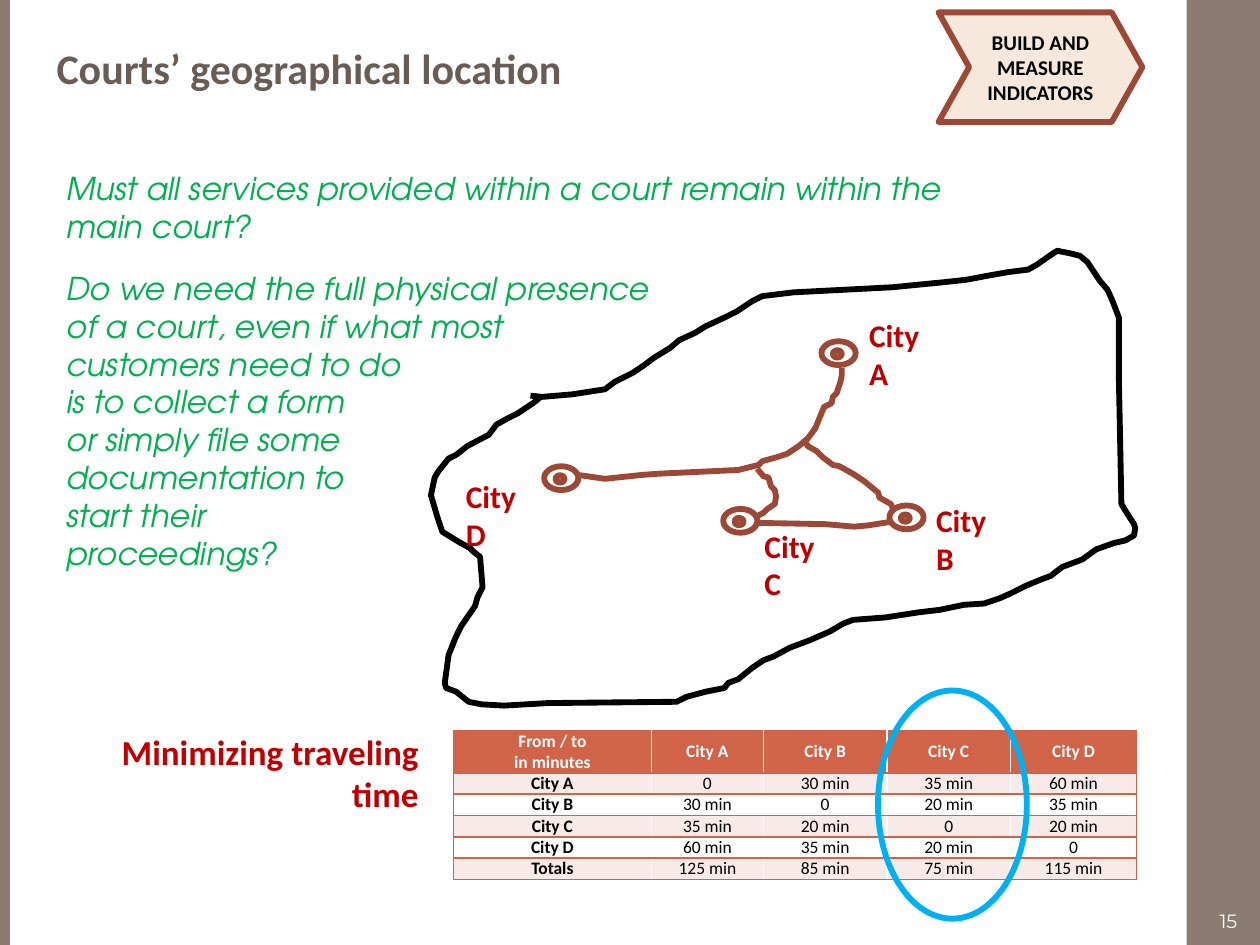
"""Build the slide on courts' geographical location, with its city map and travel times."""
from lxml import etree
from pptx import Presentation
from pptx import util as u
from pptx.dml.color import RGBColor
from pptx.enum import shapes, text
from pptx.oxml.ns import qn


def color(value):
    return RGBColor.from_string(value)


def write(paragraph, words, size, tint, bold=False, font="Calibri", align=text.PP_ALIGN.LEFT):
    paragraph.alignment = align
    run = paragraph.add_run()
    run.text = words
    run.font.name = font
    run.font.size = u.Pt(size)
    run.font.bold = bold
    run.font.color.rgb = color(tint)
    return run


CENTER = text.PP_ALIGN.CENTER
TAUPE, BROWN, CORAL, RED = "8C7B70", "9B4936", "D16349", "C00000"
STROKE = u.Pt(3.35)
MAP_UNIT = u.Cm(0.0254)

presentation = Presentation()
presentation.slide_width, presentation.slide_height = u.Cm(25.4), u.Cm(19.05)
slide = presentation.slides.add_slide(presentation.slide_layouts[6])

for left, width in ((23.92, 1.48), (0, 0.2)):
    band = slide.shapes.add_shape(
        shapes.MSO_SHAPE.RECTANGLE, u.Cm(left), 0, u.Cm(width), presentation.slide_height)
    band.shadow.inherit = False
    band.fill.solid()
    band.fill.fore_color.rgb = color(TAUPE)
    band.line.fill.background()

border = [
    (421, 314), (430, 315), (454, 313), (480, 309), (488, 303), (502, 296), (511, 290),
    (519, 284), (532, 276), (539, 270), (552, 264), (560, 259), (575, 252), (585, 247),
    (597, 239), (605, 235), (630, 232), (708, 228), (749, 224), (767, 222), (783, 219),
    (800, 216), (816, 214), (823, 210), (833, 203), (839, 199), (849, 201), (857, 203),
    (863, 208), (869, 217), (873, 223), (879, 230), (883, 239), (888, 252), (888, 300),
    (890, 400), (893, 405), (900, 416), (901, 419), (900, 425), (893, 429), (884, 431),
    (870, 436), (859, 444), (843, 450), (834, 457), (826, 460), (814, 465), (802, 471),
    (793, 475), (781, 479), (765, 480), (746, 484), (729, 486), (703, 490), (677, 492),
    (669, 495), (659, 501), (643, 508), (627, 514), (614, 521), (606, 524), (597, 530),
    (586, 539), (578, 542), (575, 546), (560, 549), (545, 553), (537, 557), (435, 558),
    (400, 560), (382, 559), (372, 557), (362, 549), (354, 546), (353, 542), (356, 520),
    (362, 505), (366, 497), (377, 481), (379, 474), (383, 466), (381, 442), (376, 438),
    (373, 435), (364, 430), (351, 422), (347, 410), (342, 393), (345, 379), (348, 374),
    (356, 364), (362, 361), (371, 354), (388, 345), (394, 337), (403, 332), (411, 328),
    (423, 320), (428, 316)]
road_d_to_a = [
    (459, 377), (480, 380), (509, 377), (522, 376), (586, 373), (602, 369), (605, 366),
    (616, 363), (625, 360), (634, 354), (641, 348), (647, 340), (654, 323), (660, 320),
    (661, 315), (664, 312), (667, 303), (668, 298), (668, 292)]
road_to_b = [
    (638, 348), (641, 354), (648, 358), (653, 363), (661, 369), (666, 370), (677, 376),
    (686, 382), (697, 391), (698, 395), (707, 400), (710, 406)]
road_to_c = [
    (601, 372), (606, 378), (610, 379), (612, 386), (615, 389), (616, 394), (615, 400),
    (609, 404), (606, 407), (600, 410)]
road_b_to_c = [(708, 414), (689, 417), (678, 417.5), (655, 416), (600, 415)]

for points, tint in ((border, "000000"), (road_d_to_a, BROWN), (road_to_b, BROWN),
                     (road_to_c, BROWN), (road_b_to_c, BROWN)):
    builder = slide.shapes.build_freeform(*points[0], scale=MAP_UNIT)
    builder.add_line_segments(points[1:], close=False)
    path = builder.convert_to_shape()
    path.shadow.inherit = False
    path.fill.background()
    path.line.color.rgb = color(tint)
    path.line.width = STROKE

cities = [
    ("City A", 16.56, 6.88, 17.27, 6.25),
    ("City B", 17.93, 10.19, 18.62, 9.98),
    ("City C", 14.58, 10.26, 15.16, 10.49),
    ("City D", 10.97, 9.4, 9.14, 9.5)]
for name, left, top, label_left, label_top in cities:
    for inset_x, inset_y, width, height in ((0.23, 0.18, 0.18, 0.15), (0, 0, 0.69, 0.48)):
        marker = slide.shapes.add_shape(
            shapes.MSO_SHAPE.OVAL, u.Cm(left + inset_x), u.Cm(top + inset_y),
            u.Cm(width), u.Cm(height))
        marker.shadow.inherit = False
        if inset_x:
            marker.fill.solid()
            marker.fill.fore_color.rgb = color(CORAL)
        else:
            marker.fill.background()
        marker.line.color.rgb = color(BROWN)
        marker.line.width = STROKE
    label = slide.shapes.add_textbox(u.Cm(label_left), u.Cm(label_top), u.Cm(1.77), u.Cm(0.84))
    label.text_frame.word_wrap = True
    write(label.text_frame.paragraphs[0], name, 18, RED, True)

title = slide.shapes.add_textbox(u.Cm(0.89), u.Cm(0.74), u.Cm(10.8), u.Cm(1.27))
write(title.text_frame.paragraphs[0], "Courts’ geographical location", 24, "695C54", True)

rows = [
    ["From / to\nin minutes", "City A", "City B", "City C", "City D"],
    ["City A", "0", "30 min", "35 min", "60 min"],
    ["City B", "30 min", "0", "20 min", "35 min"],
    ["City C", "35 min", "20 min", "0", "20 min"],
    ["City D", "60 min", "35 min", "20 min", "0"],
    ["Totals", "125 min", "85 min", "75 min", "115 min"]]
column_widths = [3.99, 2.26, 2.49, 2.49, 2.54]
table = slide.shapes.add_table(
    len(rows), len(column_widths), u.Cm(9.14), u.Cm(14.73), u.Cm(13.77), u.Cm(2.98)).table
for column, width in zip(table.columns, column_widths):
    column.width = u.Cm(width)
for row_index, values in enumerate(rows):
    table.rows[row_index].height = u.Cm(0.43 if row_index else 0.85)
    for column_index, value in enumerate(values):
        cell = table.cell(row_index, column_index)
        cell.margin_left = cell.margin_right = u.Cm(0.18)
        cell.margin_top = cell.margin_bottom = 0
        cell.vertical_anchor = text.MSO_ANCHOR.MIDDLE
        sides = ["a:lnT", "a:lnB"]
        if column_index == 0:
            sides.insert(0, "a:lnL")
        elif column_index == len(values) - 1:
            sides.insert(0, "a:lnR")
        properties = cell._tc.get_or_add_tcPr()
        for side in sides:
            edge = etree.SubElement(properties, qn(side), w=str(u.Pt(1)))
            edge_fill = etree.SubElement(edge, qn("a:solidFill"))
            etree.SubElement(edge_fill, qn("a:srgbClr"), val=CORAL)
        cell.fill.solid()
        cell.fill.fore_color.rgb = color(
            CORAL if row_index == 0 else "F7EAE9" if row_index % 2 else "FFFFFF")
        for line_index, line in enumerate(value.split("\n")):
            frame = cell.text_frame
            paragraph = frame.add_paragraph() if line_index else frame.paragraphs[0]
            write(paragraph, line, 10, "000000" if row_index else "FFFFFF",
                  row_index == 0 or column_index == 0, align=CENTER)

number = slide.shapes.add_textbox(u.Cm(24.23), u.Cm(18.14), u.Cm(1.07), u.Cm(0.86))
number.text_frame.word_wrap = True
number.text_frame.vertical_anchor = text.MSO_ANCHOR.MIDDLE
write(number.text_frame.paragraphs[0], "15", 11, "FFFFFF", font="Montserrat", align=CENTER)

questions = [
    "Must all services provided within a court remain within the main court?",
    "Do we need the full physical presence", "of a court, even if what most",
    "customers need to do", "is to collect a form", "or simply file some",
    "documentation to", "start their", "proceedings?"]
body = slide.shapes.add_textbox(u.Cm(1.09), u.Cm(3.28), u.Cm(19.6), u.Cm(9.5))
body.text_frame.word_wrap = True
for index, line in enumerate(questions):
    paragraph = body.text_frame.add_paragraph() if index else body.text_frame.paragraphs[0]
    paragraph.space_after = u.Pt(0 if index else 14)
    write(paragraph, line, 18, "00B050", font="TeX Gyre Adventor").font.italic = True

chevron = slide.shapes.add_shape(
    shapes.MSO_SHAPE.CHEVRON, u.Cm(18.92), u.Cm(0.25), u.Cm(4.11), u.Cm(2.21))
chevron.adjustments[0] = 0.28
chevron.shadow.inherit = False
chevron.fill.solid()
chevron.fill.fore_color.rgb = color("F6E9DB")
chevron.line.color.rgb = color(BROWN)
chevron.line.width = STROKE
chevron.text_frame.word_wrap = True
chevron.text_frame.vertical_anchor = text.MSO_ANCHOR.MIDDLE
write(chevron.text_frame.paragraphs[0], "BUILD AND MEASURE INDICATORS", 12, "000000", True,
      align=CENTER)

highlight = slide.shapes.add_shape(
    shapes.MSO_SHAPE.OVAL, u.Cm(17.7), u.Cm(13.92), u.Cm(3), u.Cm(4.6))
highlight.shadow.inherit = False
highlight.fill.background()
highlight.line.color.rgb = color("00B0F0")
highlight.line.width = STROKE

goal = slide.shapes.add_textbox(u.Cm(0.94), u.Cm(14.6), u.Cm(7.75), u.Cm(1.96))
goal.text_frame.word_wrap = True
write(goal.text_frame.paragraphs[0], "Minimizing traveling time", 20, RED, True,
      align=text.PP_ALIGN.RIGHT)

presentation.save("out.pptx")
